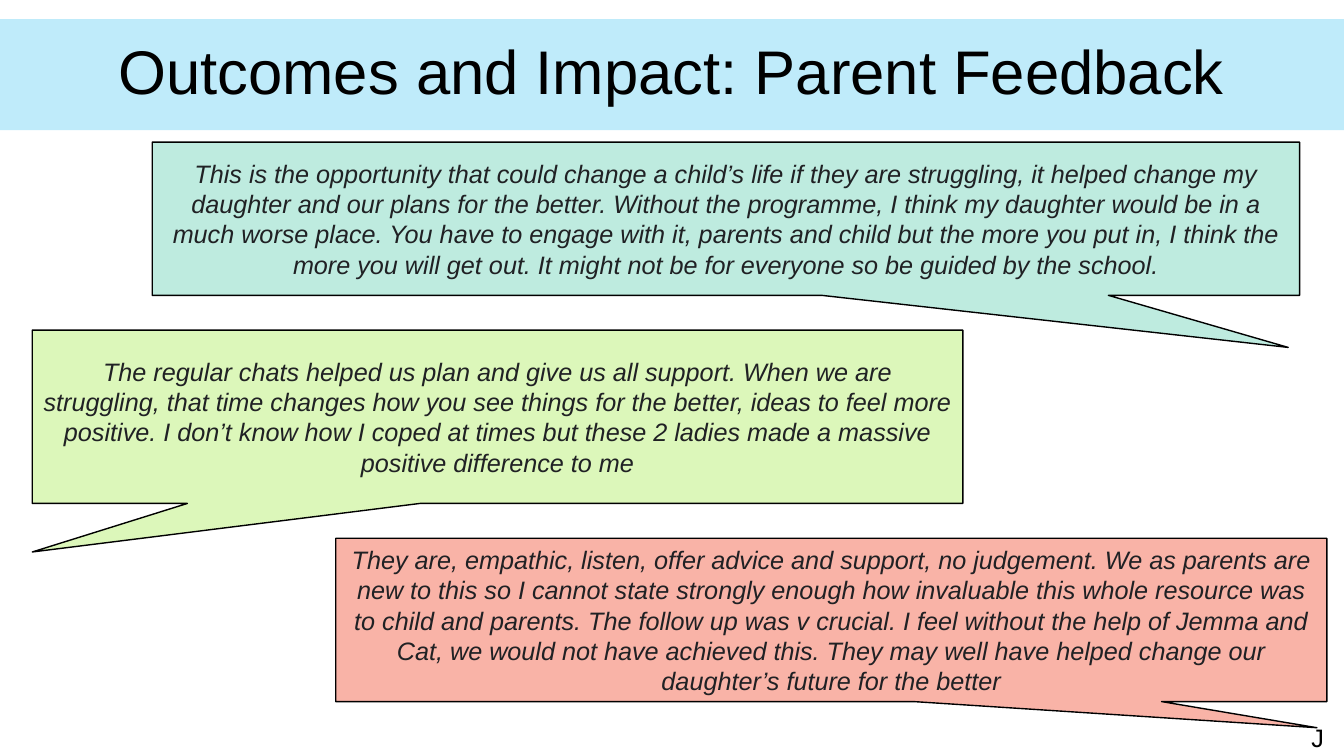
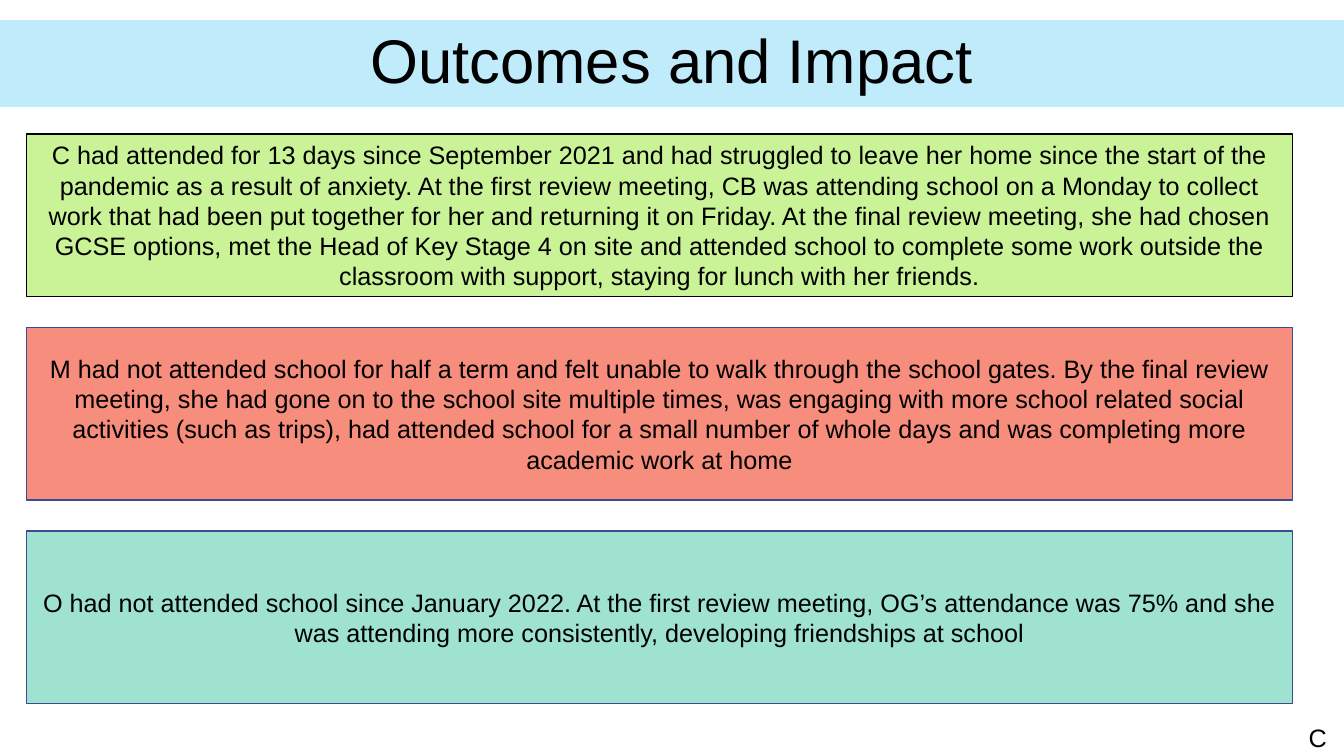
from dataclasses import dataclass

from pptx import Presentation
from pptx.dml.color import RGBColor as Rgb
from pptx.enum.shapes import MSO_SHAPE as Preset
from pptx.enum.text import MSO_ANCHOR as Anchor, PP_ALIGN as Align
from pptx.util import Inches, Pt


@dataclass(frozen=True)
class Theme:
    font: str = "Arial"
    title_size: int = 44
    body_size: int = 18
    line_width: int = 1
    title_spacing: float = 0.9
    band: str = "BFEBFA"
    white: str = "FFFFFF"
    black: str = "000000"
    quote_ink: str = "202124"
    navy: str = "3A4C94"
    pale_mint: str = "BEEBDF"
    pale_lime: str = "DCF7BA"
    pale_coral: str = "F9B3A7"
    mint: str = "9EE2CF"
    lime: str = "CAF297"
    coral: str = "F78D7C"


theme = Theme()
deck = Presentation()
deck.slide_width, deck.slide_height = Inches(13.33), Inches(7.5)

# The grid has 100 columns and 100 rows
column, row = deck.slide_width / 100, deck.slide_height / 100


def add_panel(slide, left, top, width, height, fill, text, line=None,
              preset=Preset.RECTANGLE, size=theme.body_size,
              ink=theme.black, italic=False):
    """Add a filled panel with centred text, placed in grid units."""
    panel = slide.shapes.add_shape(
        preset, round(left * column), round(top * row),
        round(width * column), round(height * row))
    panel.shadow.inherit = False
    panel.fill.solid()
    panel.fill.fore_color.rgb = Rgb.from_string(fill)
    if line:
        panel.line.color.rgb = Rgb.from_string(line)
        panel.line.width = Pt(theme.line_width)
    else:
        panel.line.fill.background()
    frame = panel.text_frame
    frame.text = text
    frame.word_wrap = True
    frame.vertical_anchor = Anchor.MIDDLE
    paragraph = frame.paragraphs[0]
    paragraph.alignment = Align.CENTER
    font = paragraph.runs[0].font
    font.name, font.size, font.italic = theme.font, Pt(size), italic
    font.color.rgb = Rgb.from_string(ink)
    return panel


def start_slide(title, band_top, band_height, presenter):
    """Add a slide with its title band and the presenter's initial."""
    slide = deck.slides.add_slide(deck.slide_layouts[6])
    band = add_panel(slide, 0, band_top, 100, band_height, theme.band, title,
                     size=theme.title_size)
    band.text_frame.paragraphs[0].line_spacing = theme.title_spacing
    add_panel(slide, 96.47, 95.2, 3.15, 4.8, theme.white, presenter,
              line=theme.white)
    return slide


# Parent feedback: left, width, height, fill, pointer tip, quote
quotes = [
    (11.33, 85.37, 20.27, theme.pale_mint, (0.49, 0.84),
     "This is the opportunity that could change a child’s life if they are "
     "struggling, it helped change my daughter and our plans for the better. "
     "Without the programme, I think my daughter would be in a much worse "
     "place. You have to engage with it, parents and child but the more you "
     "put in, I think the more you will get out. It might not be for everyone "
     "so be guided by the school."),
    (2.4, 69.24, 22.93, theme.pale_lime, (-0.5, 0.78),
     "The regular chats helped us plan and give us all support. When we are "
     "struggling, that time changes how you see things for the better, ideas "
     "to feel more positive. I don’t know how I coped at times but these 2 "
     "ladies made a massive positive difference to me"),
    (24.98, 73.74, 21.6, theme.pale_coral, (0.49, 0.66),
     "They are, empathic, listen, offer advice and support, no judgement. We "
     "as parents are new to this so I cannot state strongly enough how "
     "invaluable this whole resource was to child and parents. The follow up "
     "was v crucial. I feel without the help of Jemma and Cat, we would not "
     "have achieved this. They may well have helped change our daughter’s "
     "future for the better"),
]
feedback = start_slide("Outcomes and Impact: Parent Feedback", 2.53, 14.67, "J")
top, quote_gap = 18.8, 4.6
for left, width, height, fill, tip, quote in quotes:
    callout = add_panel(feedback, left, top, width, height, fill, quote,
                        line=theme.black, preset=Preset.RECTANGULAR_CALLOUT,
                        ink=theme.quote_ink, italic=True)
    callout.adjustments[0], callout.adjustments[1] = tip
    top += height + quote_gap

# Pupil outcomes: height, fill, outline, story
stories = [
    (21.47, theme.lime, theme.black,
     "C had attended for 13 days since September 2021 and had struggled to "
     "leave her home since the start of the pandemic as a result of anxiety. "
     "At the first review meeting, CB was attending school on a Monday to "
     "collect work that had been put together for her and returning it on "
     "Friday. At the final review meeting, she had chosen GCSE options, met "
     "the Head of Key Stage 4 on site and attended school to complete some "
     "work outside the classroom with support, staying for lunch with her "
     "friends."),
    (22.8, theme.coral, theme.navy,
     "M had not attended school for half a term and felt unable to walk "
     "through the school gates. By the final review meeting, she had gone on "
     "to the school site multiple times, was engaging with more school "
     "related social activities (such as trips), had attended school for a "
     "small number of whole days and was completing more academic work at "
     "home"),
    (22.8, theme.mint, theme.navy,
     "O had not attended school since January 2022. At the first review "
     "meeting, OG’s attendance was 75% and she was attending more "
     "consistently, developing friendships at school"),
]
outcomes = start_slide("Outcomes and Impact", 2.67, 11.47, "C")
top, story_gap = 17.73, 4.13
for height, fill, outline, story in stories:
    add_panel(outcomes, 1.95, top, 94.22, height, fill, story, line=outline)
    top += height + story_gap

deck.save("out.pptx")
